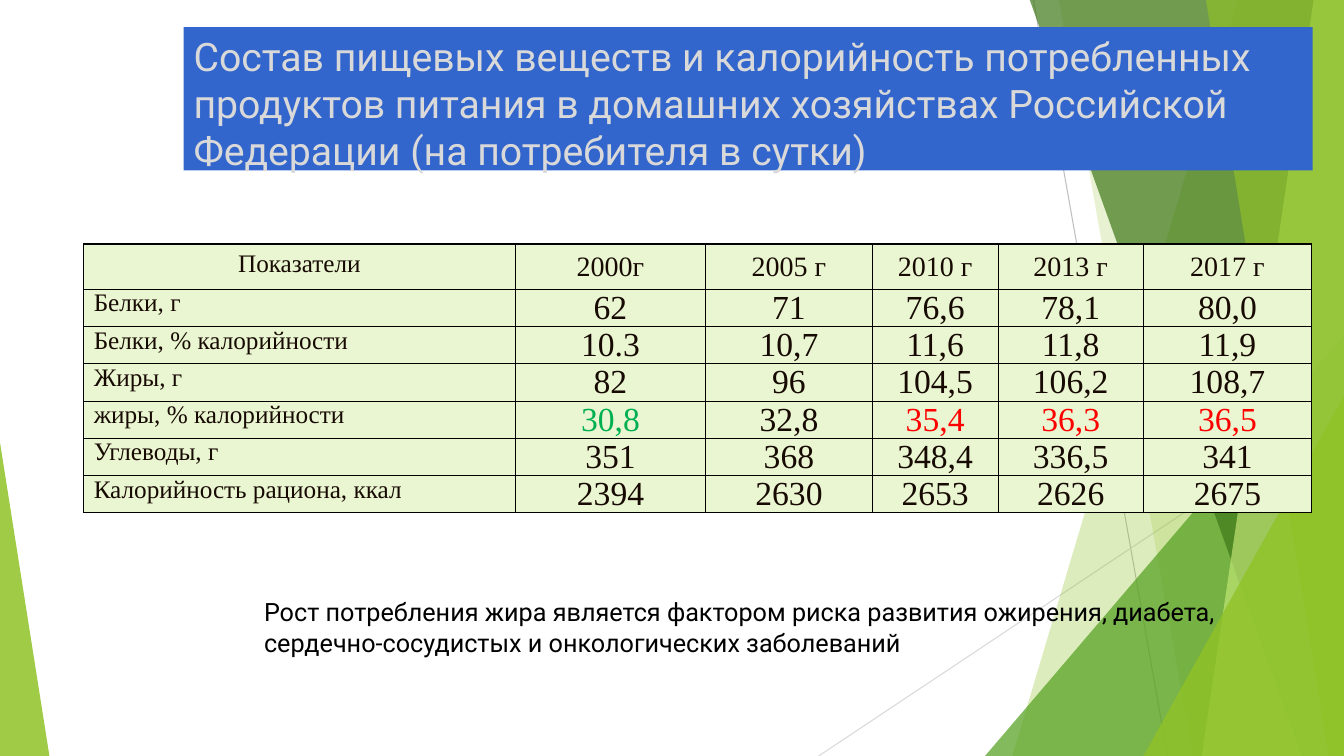
import lxml.etree
import pptx
import pptx.dml.color
import pptx.enum.shapes
import pptx.enum.text
import pptx.oxml
import pptx.oxml.ns
import pptx.util

Inches = pptx.util.Inches
Pt = pptx.util.Pt
ALIGN = pptx.enum.text.PP_ALIGN
ANCHOR = pptx.enum.text.MSO_ANCHOR
qn = pptx.oxml.ns.qn
INK = "170A02"


def paint(color_format, color, opacity=100):
    color_format.rgb = pptx.dml.color.RGBColor.from_string(color)
    if opacity < 100:
        srgb = color_format._xFill.find(qn("a:srgbClr"))
        lxml.etree.SubElement(srgb, qn("a:alpha"), val=str(opacity * 1000))


def write(frame, text, font, size, color, **paragraph_format):
    frame.text = text
    paragraph = frame.paragraphs[0]
    for name, value in paragraph_format.items():
        setattr(paragraph, name, value)
    run = paragraph.runs[0]
    for name, value in {"name": font, "size": Pt(size), "bold": False}.items():
        setattr(run.font, name, value)
    paint(run.font.color, color)


deck = pptx.Presentation()
deck.slide_width, deck.slide_height = Inches(13.33), Inches(7.5)
slide = deck.slides.add_slide(deck.slide_layouts[5])
shapes = slide.shapes

# Thin background lines
for x1, y1, x2, y2, gray in [
    (10.25, 0, 11.58, 7.5, "BFBFBF"),
    (13.33, 4.03, 8.12, 7.5, "D9D9D9"),
]:
    ray = shapes.add_connector(
        pptx.enum.shapes.MSO_CONNECTOR.STRAIGHT,
        Inches(x1), Inches(y1), Inches(x2), Inches(y2))
    paint(ray.line.color, gray)
    ray.line.width = Pt(0.75)
    lxml.etree.SubElement(ray.element.spPr, qn("a:effectLst"))

# Translucent green facets: bands give top and bottom x of the left edge,
# triangles give left, top, width, height and apex position
facets = [
    ("band", (12.28, 10.04), "90C226", 30),
    ("band", (10.5, 11.83), "90C226", 20),
    ("triangle", (9.77, 3.33, 3.56, 4.17, 1), "54A021", 72),
    ("band", (10.21, 12.91), "3F7819", 70),
    ("band", (13.03, 11.92), "C0E474", 70),
    ("band", (11.96, 13.18), "90C226", 65),
    ("triangle", (11.34, 3.93, 1.99, 3.57, 1), "90C226", 80),
    ("triangle", (0, 4.39, 0.49, 3.11, 0), "90C226", 85),
]
for kind, place, color, opacity in facets:
    if kind == "band":
        top_x, bottom_x = place
        outline = shapes.build_freeform(Inches(top_x), Inches(-0.01))
        outline.add_line_segments(
            [(Inches(x), Inches(y))
             for x, y in [(13.33, -0.01), (13.33, 7.5), (bottom_x, 7.5)]])
        facet = outline.convert_to_shape()
    else:
        *box, apex = place
        facet = shapes.add_shape(
            pptx.enum.shapes.MSO_SHAPE.ISOSCELES_TRIANGLE, *map(Inches, box))
        facet.adjustments[0] = apex
    facet.shadow.inherit = False
    facet.line.fill.background()
    facet.fill.solid()
    paint(facet.fill.fore_color, color, opacity)

# Title, brought in front of the facets
title = shapes.title
title.element.getparent().append(title.element)
for name, value in {"left": 1.82, "top": 0.27, "width": 11.2, "height": 1.42}.items():
    setattr(title, name, Inches(value))
title.fill.solid()
paint(title.fill.fore_color, "3366CC")
for name, value in {"word_wrap": True, "vertical_anchor": ANCHOR.TOP,
                    "auto_size": pptx.enum.text.MSO_AUTO_SIZE.NONE}.items():
    setattr(title.text_frame, name, value)
write(title.text_frame,
      "Состав пищевых веществ и калорийность потребленных продуктов питания "
      "в домашних хозяйствах Российской Федерации (на потребителя в сутки)",
      "Roboto", 28, "D9D9D9", alignment=ALIGN.LEFT)

# Nutrient table
nutrients = [
    ["Показатели", "2000г", "2005 г", "2010 г", "2013 г", "2017 г"],
    ["Белки, г", "62", "71", "76,6", "78,1", "80,0"],
    ["Белки, % калорийности", "10.3", "10,7", "11,6", "11,8", "11,9"],
    ["Жиры, г", "82", "96", "104,5", "106,2", "108,7"],
    ["жиры, % калорийности", "30,8", "32,8", "35,4", "36,3", "36,5"],
    ["Углеводы, г", "351", "368", "348,4", "336,5", "341"],
    ["Калорийность рациона, ккал", "2394", "2630", "2653", "2626", "2675"],
]
highlights = {(4, 1): "00B050", (4, 3): "FF0000", (4, 4): "FF0000", (4, 5): "FF0000"}
column_widths = [4.28, 1.89, 1.65, 1.25, 1.44, 1.67]
table = shapes.add_table(len(nutrients), len(column_widths), Inches(0.83),
                         Inches(2.42), Inches(12.17), Inches(2.67)).table
table.first_row = table.horz_banding = False
for column, width in zip(table.columns, column_widths):
    column.width = Inches(width)

for r, values in enumerate(nutrients):
    table.rows[r].height = Inches(0.37 if r else 0.45)
    for c, value in enumerate(values):
        cell = table.cell(r, c)
        for name, setting in {
            "margin_left": Inches(0.1), "margin_right": Inches(0.1),
            "margin_top": 0, "margin_bottom": 0,
            "vertical_anchor": ANCHOR.MIDDLE if c else ANCHOR.TOP,
        }.items():
            setattr(cell, name, setting)
        layout = {"alignment": ALIGN.CENTER if c or r == 0 else ALIGN.JUSTIFY}
        if r == 0:
            layout.update(space_before=Pt(2), space_after=Pt(2))
            if c == 0:
                layout["line_spacing"] = 1.2
        size = 18 if c == 0 else 20 if r == 0 else 24
        write(cell.text_frame, value, "Times New Roman", size,
              highlights.get((r, c), INK), **layout)
        cell.fill.solid()
        paint(cell.fill.fore_color, "EAF6D1")
        # Black border on all four sides
        properties = cell._tc.get_or_add_tcPr()
        for position, side in enumerate(["lnL", "lnR", "lnT", "lnB"]):
            properties.insert(position, pptx.oxml.parse_xml(
                f'<a:{side} xmlns:a="{pptx.oxml.ns.nsuri("a")}" w="12700">'
                '<a:solidFill><a:srgbClr val="000000"/></a:solidFill>'
                f'</a:{side}>'))

# Conclusion
conclusion = shapes.add_textbox(Inches(2.52), Inches(5.87), Inches(9.89), Inches(0.71))
conclusion.text_frame.word_wrap = True
write(conclusion.text_frame,
      "Рост потребления жира является фактором риска развития ожирения, диабета, "
      "сердечно-сосудистых и онкологических заболеваний",
      "Roboto", 18, "000000")

deck.save("out.pptx")
